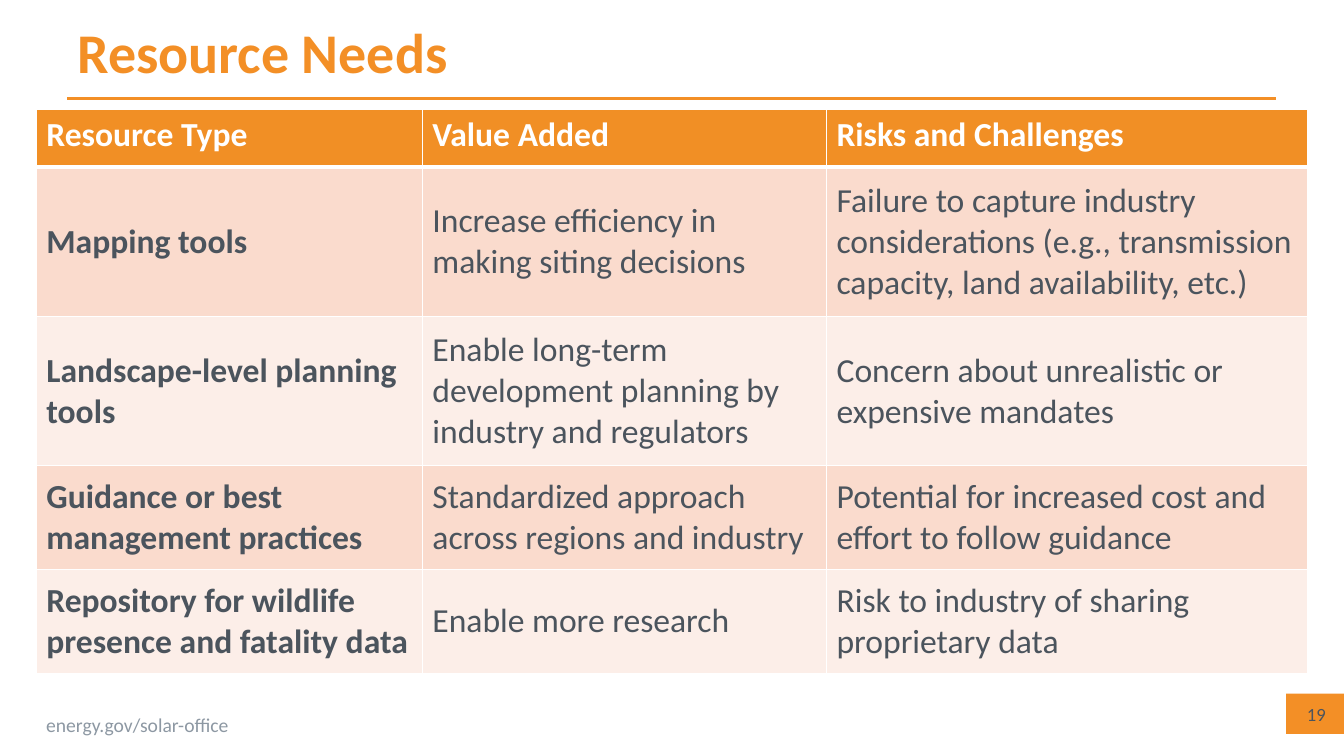
from lxml import etree
from pptx import Presentation
from pptx.dml.color import RGBColor
from pptx.enum.shapes import MSO_CONNECTOR, MSO_SHAPE
from pptx.enum.text import MSO_ANCHOR, PP_ALIGN
from pptx.oxml.ns import qn
from pptx.util import Pt

FONT = "Calibri"
COLORS = {
    "accent": "F38F26",
    "header": "F18F25",
    "band_dark": "FADBCD",
    "band_light": "FCEEE8",
    "text": "4B545D",
    "footer": "8D98A3",
    "white": "FFFFFF",
}
COLUMN_WIDTHS = [275.8, 288.7, 343.4]
ROW_HEIGHTS = [41, 106.6, 106.6, 74.2, 74.2]
RESOURCES = [
    ("Resource Type", "Value Added", "Risks and Challenges"),
    ("Mapping tools",
     "Increase efficiency in making siting decisions",
     "Failure to capture industry considerations (e.g., transmission "
     "capacity, land availability, etc.)"),
    ("Landscape-level planning tools",
     "Enable long-term development planning by industry and regulators",
     "Concern about unrealistic or expensive mandates"),
    ("Guidance or best management practices",
     "Standardized approach across regions and industry",
     "Potential for increased cost and effort to follow guidance"),
    ("Repository for wildlife presence and fatality data",
     "Enable more research",
     "Risk to industry of sharing proprietary data"),
]


def rgb(name):
    return RGBColor.from_string(COLORS[name])


def write(frame, text, size, color, bold=False, align=PP_ALIGN.LEFT):
    paragraph = frame.paragraphs[0]
    paragraph.alignment = align
    run = paragraph.add_run()
    run.text = text
    run.font.name = FONT
    run.font.size = Pt(size)
    run.font.bold = bold
    run.font.color.rgb = rgb(color)


def place_title(slide, text):
    title = slide.shapes.title
    title.left, title.top = Pt(48.2), Pt(1.4)
    title.width, title.height = Pt(864), Pt(69.8)
    title.text_frame.vertical_anchor = MSO_ANCHOR.MIDDLE
    write(title.text_frame, text, 40, "accent", bold=True)


def add_rule(slide, left, right, y):
    rule = slide.shapes.add_connector(
        MSO_CONNECTOR.STRAIGHT, Pt(left), Pt(y), Pt(right), Pt(y))
    rule.line.color.rgb = rgb("accent")
    rule.line.width = Pt(2)
    etree.SubElement(rule._element.spPr, qn("a:effectLst"))


def add_block(slide, left, top, width, height):
    block = slide.shapes.add_shape(
        MSO_SHAPE.RECTANGLE, Pt(left), Pt(top), Pt(width), Pt(height))
    block.shadow.inherit = False
    block.fill.solid()
    block.fill.fore_color.rgb = rgb("accent")
    block.line.fill.background()


def add_label(slide, text, left, top, width, height, size, color,
              align=PP_ALIGN.LEFT, anchor=MSO_ANCHOR.TOP, wrap=True):
    frame = slide.shapes.add_textbox(
        Pt(left), Pt(top), Pt(width), Pt(height)).text_frame
    frame.word_wrap = wrap
    frame.vertical_anchor = anchor
    write(frame, text, size, color, align=align)


def set_borders(cell, top, bottom):
    properties = cell._tc.get_or_add_tcPr()
    widths = {"a:lnL": 1, "a:lnR": 1, "a:lnT": top, "a:lnB": bottom}
    # Borders come before the fill in the cell properties
    for position, (tag, width) in enumerate(widths.items()):
        border = etree.Element(qn(tag), w=str(Pt(width)))
        fill = etree.SubElement(border, qn("a:solidFill"))
        etree.SubElement(fill, qn("a:srgbClr"), val=COLORS["white"])
        properties.insert(position, border)


def add_resource_table(slide):
    table = slide.shapes.add_table(
        len(RESOURCES), len(COLUMN_WIDTHS), Pt(25.9), Pt(78.5),
        Pt(sum(COLUMN_WIDTHS)), Pt(sum(ROW_HEIGHTS))).table
    for column, width in zip(table.columns, COLUMN_WIDTHS):
        column.width = Pt(width)
    for row, height in zip(table.rows, ROW_HEIGHTS):
        row.height = Pt(height)

    for r, entries in enumerate(RESOURCES):
        is_header = r == 0
        band = "band_dark" if r % 2 else "band_light"
        for c, entry in enumerate(entries):
            cell = table.cell(r, c)
            cell.fill.solid()
            cell.fill.fore_color.rgb = rgb("header" if is_header else band)
            cell.vertical_anchor = (
                MSO_ANCHOR.TOP if is_header else MSO_ANCHOR.MIDDLE)
            write(cell.text_frame, entry, 24,
                  "white" if is_header else "text",
                  bold=is_header or c == 0)
            set_borders(cell, top=3 if r == 1 else 1,
                        bottom=3 if is_header else 1)


def main():
    deck = Presentation()
    deck.slide_width, deck.slide_height = Pt(960), Pt(540)
    slide = deck.slides.add_slide(deck.slide_layouts[5])

    # Heading
    place_title(slide, "Resource Needs")
    add_rule(slide, 48.2, 911.5, 70.6)

    # Footer and page number
    add_block(slide, 918.7, 495.4, 41.3, 28.8)
    add_label(slide, "energy.gov/solar-office", 25.9, 505.4, 146.9, 24.5,
              14, "footer", wrap=False)
    add_label(slide, "19", 920.9, 496, 38.9, 28.8, 13.3, "text",
              align=PP_ALIGN.CENTER, anchor=MSO_ANCHOR.MIDDLE)

    # Needs by resource type
    add_resource_table(slide)
    deck.save("out.pptx")


if __name__ == "__main__":
    main()
